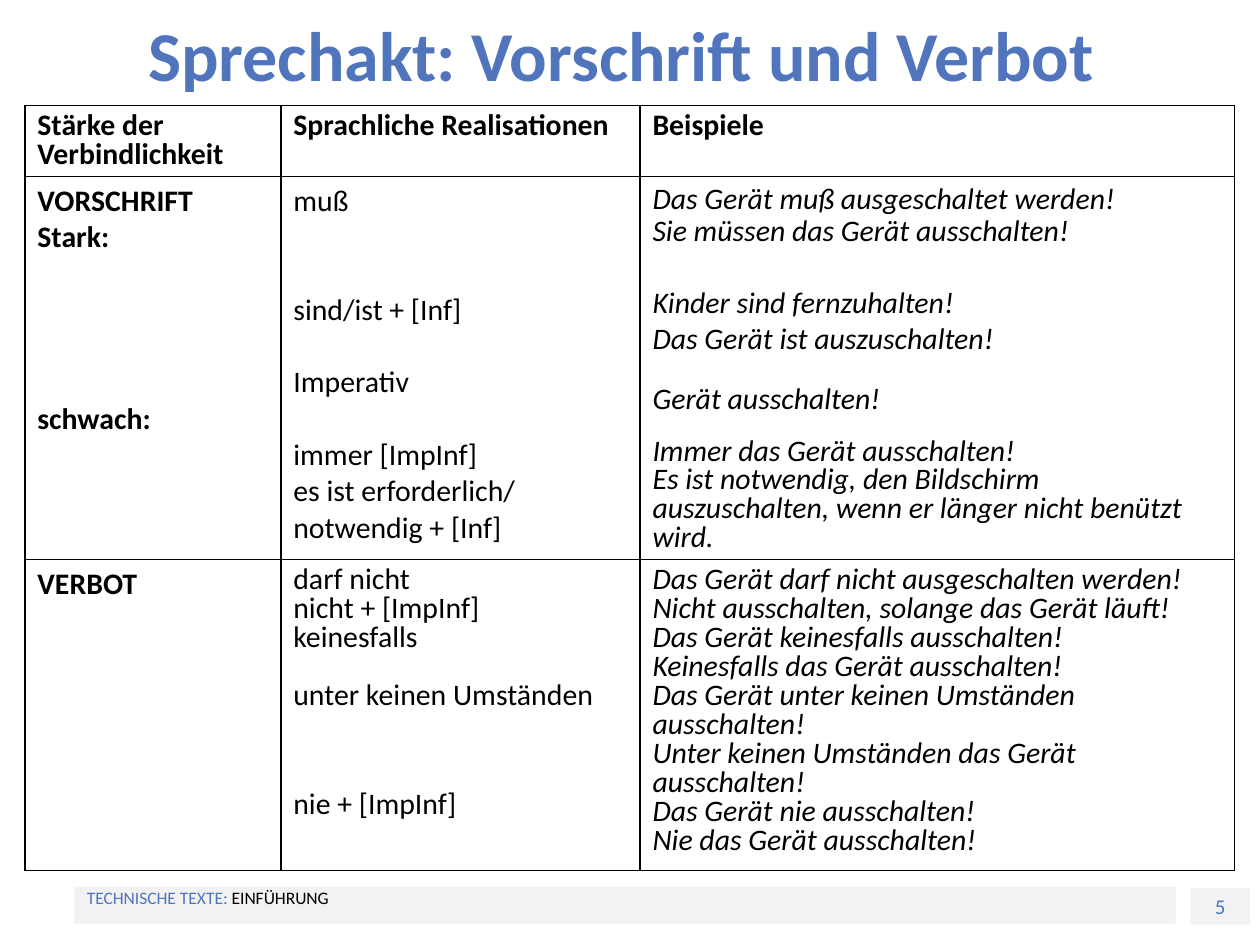
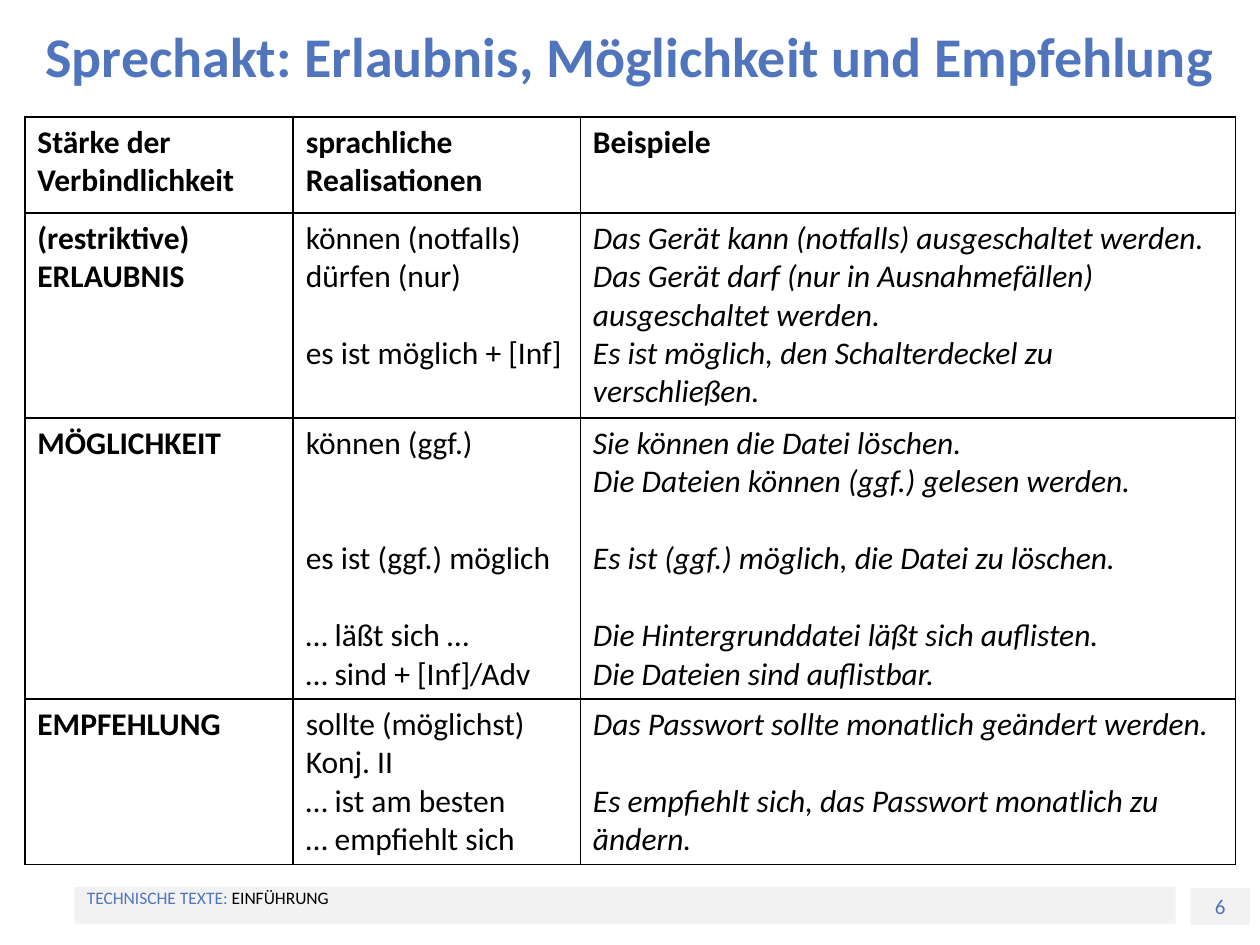
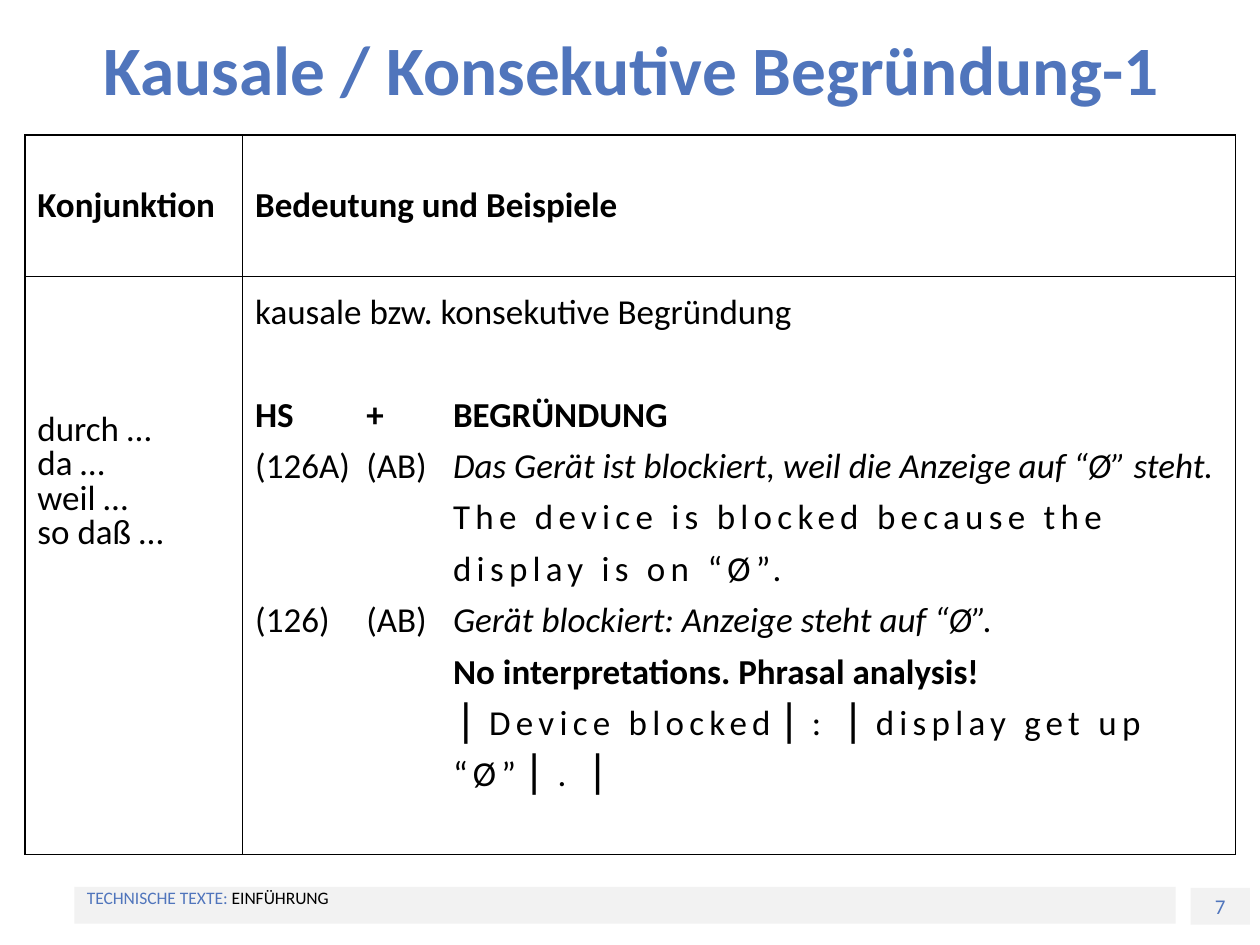
from dataclasses import dataclass, field

import pptx
import pptx.dml.color
import pptx.enum.shapes
import pptx.enum.text
import pptx.oxml
import pptx.oxml.ns
import pptx.util
from pptx.util import Cm, Pt

FONT = "Calibri"
BLUE, BLACK, WHITE, GREY = "5075BC", "000000", "FFFFFF", "F2F2F2"
LINE_HEIGHT = 1.22  # height of a single line, relative to the font size
TABLE_LEFT = 0.5
ALIGN = pptx.enum.text.PP_ALIGN
ANCHOR = pptx.enum.text.MSO_ANCHOR
BOLD, ITALIC = {"bold": True}, {"italic": True}


@dataclass
class Line:
    """A paragraph; gap is the space before it, counted in single lines."""
    text: str
    spacing: float = 1.0
    gap: float = 0
    format: dict = field(default_factory=dict)
    tail: str = ""  # closing italic part
    tracking: int = 0
    left: float = 0
    tabs: tuple = ()


def color(value):
    return pptx.dml.color.RGBColor.from_string(value)


def set_values(target, values):
    for name, value in values.items():
        setattr(target, name, value)


def add_run(paragraph, text, size, fill=BLACK, **values):
    run = paragraph.add_run()
    run.text = text
    set_values(run.font, {"name": FONT, "size": Pt(size), **values})
    run.font.color.rgb = color(fill)
    return run


def add_child(parent, tag, **attributes):
    child = parent.makeelement(pptx.oxml.ns.qn(tag), {})
    parent.append(child)
    for name, value in attributes.items():
        child.set(name, str(value))
    return child


def lines(*texts, spacing=1.0):
    """Turn texts and (text, gap) or (text, gap, spacing) tuples into Lines."""
    result = []
    for item in texts:
        text, gap, own = ((item,) if isinstance(item, str) else item) + (0, spacing)[
            (0 if isinstance(item, str) else len(item) - 1):]
        result.append(Line(text, own, gap))
    return result


# Shared parts of every slide
def add_title(slide, box, text, size):
    shape = slide.shapes.add_textbox(*map(Cm, box))
    frame = shape.text_frame
    set_values(frame, {"word_wrap": True, "vertical_anchor": ANCHOR.MIDDLE})
    frame.paragraphs[0].alignment = ALIGN.CENTER
    add_run(frame.paragraphs[0], text, size, BLUE, bold=True)


def add_band(slide, box, parts, size, align, anchor):
    shape = slide.shapes.add_shape(
        pptx.enum.shapes.MSO_SHAPE.RECTANGLE, *map(Cm, box))
    shape.shadow.inherit = False
    shape.fill.solid()
    shape.fill.fore_color.rgb = color(GREY)
    shape.line.fill.background()
    frame = shape.text_frame
    set_values(frame, {"word_wrap": True, "vertical_anchor": anchor,
                       "margin_top": 0, "margin_bottom": 0})
    paragraph = frame.paragraphs[0]
    paragraph.alignment = align
    for text, fill in parts:
        add_run(paragraph, text, size, fill)


def add_footer(slide, number):
    add_band(slide, (1.5, 17.88, 22.2, 0.74),
             [("TECHNISCHE TEXTE: ", BLUE), ("EINFÜHRUNG", BLACK)],
             10, ALIGN.LEFT, ANCHOR.TOP)
    add_band(slide, (24, 17.9, 1.2, 0.74), [(str(number), BLUE)],
             12, ALIGN.CENTER, ANCHOR.MIDDLE)


# Table parts
def add_borders(cell):
    properties = cell._tc.get_or_add_tcPr()
    for tag in ("a:lnL", "a:lnR", "a:lnT", "a:lnB"):
        border = add_child(properties, tag, w=int(Pt(1)))
        fill = add_child(border, "a:solidFill")
        add_child(fill, "a:srgbClr", val=BLACK)


def fill_cell(cell, cell_lines, size, values):
    add_borders(cell)
    cell.fill.solid()
    cell.fill.fore_color.rgb = color(WHITE)
    frame = cell.text_frame
    for index, line in enumerate(cell_lines):
        paragraph = frame.add_paragraph() if index else frame.paragraphs[0]
        properties = paragraph._p.get_or_add_pPr()
        if line.left:
            properties.set("marL", str(int(Cm(line.left))))
        if line.tabs:
            tab_list = add_child(properties, "a:tabLst")
            for position in line.tabs:
                add_child(tab_list, "a:tab", pos=int(Cm(position)), algn="l")
        paragraph.line_spacing = line.spacing
        if line.gap:
            paragraph.space_before = Pt(round(line.gap * size * LINE_HEIGHT, 2))
        run = add_run(paragraph, line.text, size, **{**values, **line.format})
        if line.tracking:
            run.font._element.set("spc", str(line.tracking * 100))
        if line.tail:
            add_run(paragraph, line.tail, size, **ITALIC)


def add_grid(slide, top, widths, heights, rows, size, column_formats):
    """Draw a table whose first row is a bold header."""
    table = slide.shapes.add_table(
        len(rows), len(widths), Cm(TABLE_LEFT), Cm(top),
        Cm(sum(widths)), Cm(sum(heights))).table
    set_values(table, {"first_row": False, "horz_banding": False})
    for column, width in zip(table.columns, widths):
        column.width = Cm(width)
    for row, height in zip(table.rows, heights):
        row.height = Cm(height)
    for row_index, row in enumerate(rows):
        for column_index, cell_lines in enumerate(row):
            values = column_formats[column_index] if row_index else BOLD
            fill_cell(table.cell(row_index, column_index), cell_lines, size, values)
    return table


# Slides
def add_speech_act_slide(slide, title_box, title, title_size, **grid):
    add_title(slide, title_box, title, title_size)
    add_grid(slide, column_formats=(BOLD, {}, ITALIC), **grid)


def add_reason_slide(slide, title_box, title, title_size):
    add_title(slide, title_box, title, title_size)
    tabs = (2.24, 3.99)
    indent = tabs[-1]
    meaning = [
        Line("kausale bzw. konsekutive Begründung"),
        Line("HS\t+\tBEGRÜNDUNG", gap=1.2, format=BOLD, tabs=tabs),
        Line("(126A)\t(AB)\t", tabs=tabs,
             tail="Das Gerät ist blockiert, weil die Anzeige auf “Ø” steht."),
        Line("The device is blocked because the display is on “Ø”.",
             tracking=3, left=indent),
        Line("(126)\t(AB)\t", tabs=tabs,
             tail="Gerät blockiert: Anzeige steht auf “Ø”."),
        Line("No interpretations. Phrasal analysis!", format=BOLD, left=indent),
        Line("⎥ Device blocked⎥ : ⎥ display get up “Ø”⎥ . ⎥",
             tracking=3, left=indent),
    ]
    for line in meaning:
        line.spacing = 1.2
    rows = [
        [lines("Konjunktion"), lines("Bedeutung und Beispiele")],
        [lines("durch …", "da …", "weil …", "so daß …", spacing=0.8), meaning],
    ]
    table = add_grid(slide, 2.72, (4.39, 20.02), (2.85, 11.66), rows, 20, ({}, {}))
    for cell in table.rows[0].cells:
        cell.vertical_anchor = ANCHOR.MIDDLE
    table.cell(1, 0).margin_top = Cm(2.78)


OBLIGATION_ROWS = [
    [lines("Stärke der Verbindlichkeit", spacing=0.8),
     lines("Sprachliche Realisationen", spacing=0.8),
     lines("Beispiele", spacing=0.8)],
    [lines("VORSCHRIFT", "Stark:", ("schwach:", 4)),
     lines("muß", ("sind/ist + [Inf]", 2), ("Imperativ", 1),
           ("immer [ImpInf]", 1), "es ist erforderlich/", "notwendig + [Inf]"),
     lines(("Das Gerät muß ausgeschaltet werden!", 0, 0.9),
           ("Sie müssen das Gerät ausschalten!", 0, 0.9),
           ("Kinder sind fernzuhalten!", 1),
           "Das Gerät ist auszuschalten!",
           ("Gerät ausschalten!", 0.8, 0.8),
           ("Immer das Gerät ausschalten!", 0.7, 0.7),
           ("Es ist notwendig, den Bildschirm auszuschalten, "
            "wenn er länger nicht benützt wird.", 0, 0.8))],
    [lines("VERBOT"),
     lines("darf nicht", "nicht + [ImpInf]", "keinesfalls",
           ("unter keinen Umständen", 0.8), ("nie + [ImpInf]", 2.3, 0.7),
           spacing=0.8),
     lines("Das Gerät darf nicht ausgeschalten werden!",
           "Nicht ausschalten, solange das Gerät läuft!",
           "Das Gerät keinesfalls ausschalten!",
           "Keinesfalls das Gerät ausschalten!",
           "Das Gerät unter keinen Umständen ausschalten!",
           "Unter keinen Umständen das Gerät ausschalten!",
           "Das Gerät nie ausschalten!",
           "Nie das Gerät ausschalten!", spacing=0.8)],
]

PERMISSION_ROWS = [
    [lines("Stärke der Verbindlichkeit"), lines("sprachliche Realisationen"),
     lines("Beispiele")],
    [lines("(restriktive)", "ERLAUBNIS"),
     lines("können (notfalls)", "dürfen (nur)", ("es ist möglich + [Inf]", 1)),
     lines("Das Gerät kann (notfalls) ausgeschaltet werden.",
           "Das Gerät darf (nur in Ausnahmefällen) ausgeschaltet werden.",
           "Es ist möglich, den Schalterdeckel zu verschließen.")],
    [lines("MÖGLICHKEIT"),
     lines("können (ggf.)", ("es ist (ggf.) möglich", 2),
           ("… läßt sich …", 1), "… sind + [Inf]/Adv"),
     lines("Sie können die Datei löschen.",
           "Die Dateien können (ggf.) gelesen werden.",
           ("Es ist (ggf.) möglich, die Datei zu löschen.", 1),
           ("Die Hintergrunddatei läßt sich auflisten.", 1),
           "Die Dateien sind auflistbar.")],
    [lines("EMPFEHLUNG"),
     lines("sollte (möglichst)", "Konj. II", "… ist am besten",
           "… empfiehlt sich"),
     lines("Das Passwort sollte monatlich geändert werden.",
           ("Es empfiehlt sich, das Passwort monatlich zu ändern.", 1))],
]


def main():
    presentation = pptx.Presentation()
    presentation.slide_width, presentation.slide_height = Cm(25.4), Cm(19.05)
    slides = [presentation.slides.add_slide(presentation.slide_layouts[6])
              for _ in range(3)]
    for number, slide in enumerate(slides, start=5):
        add_footer(slide, number)

    add_speech_act_slide(
        slides[0], (1.09, -0.48, 22.86, 3.12),
        "Sprechakt: Vorschrift und Verbot", 40,
        top=2.13, widths=(5.16, 7.24, 11.99), heights=(1.43, 7.72, 6.27),
        rows=OBLIGATION_ROWS, size=17)
    add_speech_act_slide(
        slides[1], (0, -0.48, 25.4, 3.18),
        "Sprechakt: Erlaubnis, Möglichkeit und Empfehlung", 32,
        top=2.36, widths=(5.41, 5.79, 13.21), heights=(1.93, 4.14, 5.66, 3.34),
        rows=PERMISSION_ROWS, size=18)
    add_reason_slide(
        slides[2], (1.3, -0.1, 22.86, 2.92),
        "Kausale / Konsekutive Begründung-1", 39.6)
    presentation.save("out.pptx")


if __name__ == "__main__":
    main()
